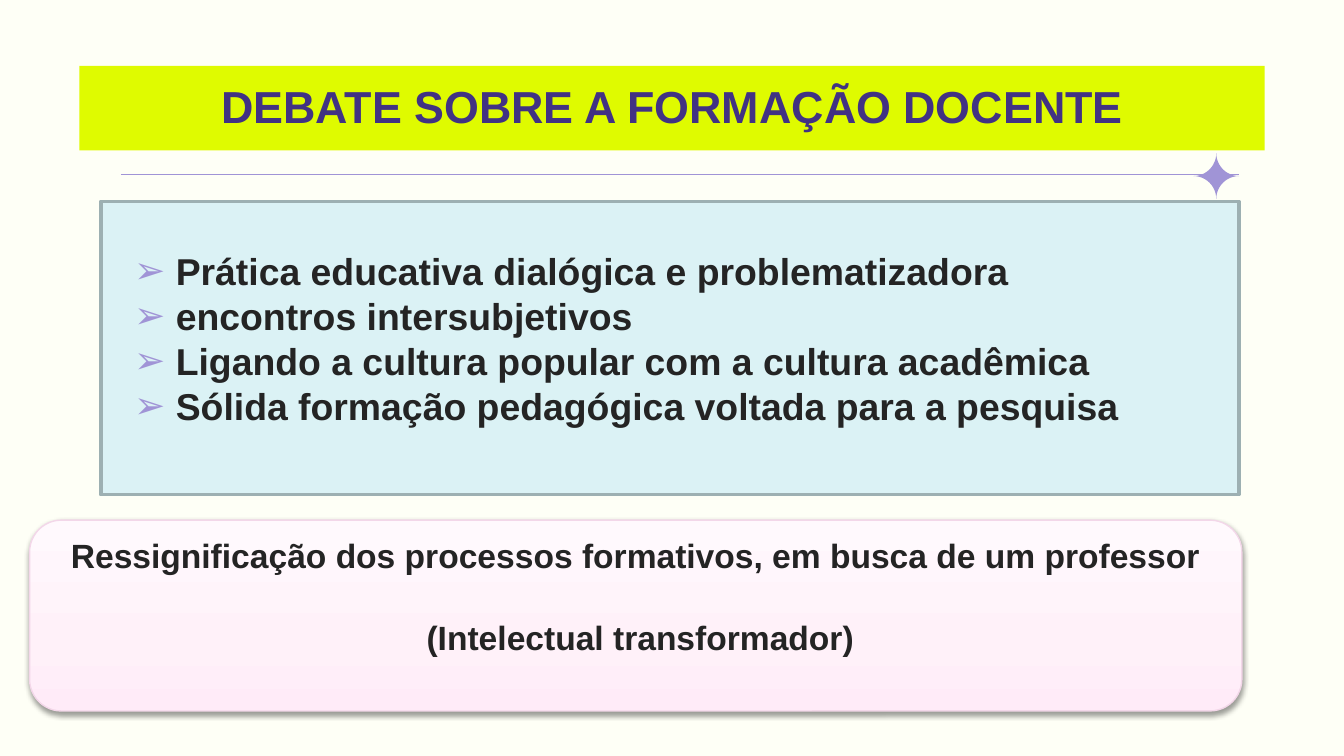
import copy
from lxml import etree
from pptx import Presentation
from pptx import util as u
from pptx.dml.color import RGBColor
from pptx.enum import shapes, text
from pptx.oxml import parse_xml
from pptx.oxml.ns import qn

NS = 'xmlns:a="http://schemas.openxmlformats.org/drawingml/2006/main"'
LILAC, INK = "A094D6", "242424"


def rgb(color):
    return RGBColor.from_string(color)


def add_run(p, words, size, color):
    r = p.add_run()
    r.text = words
    r.font.name, r.font.size, r.font.bold = "Arial", u.Pt(size), True
    r.font.color.rgb = rgb(color)


prs = Presentation()
# 16:9 page
prs.slide_width, prs.slide_height = u.Inches(10), u.Inches(10 * 9 / 16)
s = prs.slides.add_slide(prs.slide_layouts[6])
s.background.fill.solid()
s.background.fill.fore_color.rgb = rgb("FEFFF6")

# Plain shapes: kind, left, top, width, height, fill, border
kinds = shapes.MSO_SHAPE
boxes = []
for kind, x, y, w, h, fill, border in (
    (kinds.RECTANGLE, 0.75, 1.5, 8.47, 2.18, "DBF2F5", "9DB0B2"),
    (kinds.RECTANGLE, 0.59, 0.49, 8.82, 0.63, "DFFB00", None),
    (kinds.PLAQUE, 8.88, 1.14, 0.34, 0.34, LILAC, None),
    (kinds.ROUNDED_RECTANGLE, 0.22, 3.87, 9.02, 1.42, None, "F3D7E9"),
):
    sp = s.shapes.add_shape(kind, u.Inches(x), u.Inches(y), u.Inches(w), u.Inches(h))
    sp.shadow.inherit = False
    if fill:
        sp.fill.solid()
        sp.fill.fore_color.rgb = rgb(fill)
    if border:
        sp.line.color.rgb = rgb(border)
    else:
        sp.line.fill.background()
    sp.text_frame.word_wrap = True
    boxes.append(sp)
body, title, star, closing = boxes
body.line.width = u.Pt(2)
closing.line.width = u.Pt(0.75)
star.adjustments[0] = 0.5

# Title
tf = title.text_frame
tf.vertical_anchor = text.MSO_ANCHOR.MIDDLE
tf.margin_top, tf.margin_bottom = u.Inches(0.05), u.Inches(0.09)
p = tf.paragraphs[0]
p.alignment = text.PP_ALIGN.CENTER
add_run(p, "DEBATE SOBRE A FORMAÇÃO DOCENTE", 24, "413283")

# Rule under the title, behind the star
line = s.shapes.add_connector(shapes.MSO_CONNECTOR.STRAIGHT, u.Inches(0.9), u.Inches(1.3),
                              u.Inches(9.22), u.Inches(1.3))
line.line.color.rgb = rgb(LILAC)
line.line.width = u.Pt(0.75)
etree.SubElement(line._element.spPr, qn("a:effectLst"))
star._element.addprevious(line._element)

# Bulleted list
tf = body.text_frame
tf.vertical_anchor = text.MSO_ANCHOR.TOP
tf.margin_left = tf.margin_right = u.Inches(0.1)
tf.margin_top = u.Inches(0.35)
for i, words in enumerate((
    "Prática educativa dialógica e problematizadora",
    "encontros intersubjetivos",
    "Ligando a cultura popular com a cultura acadêmica",
    "Sólida formação pedagógica voltada para a pesquisa",
)):
    p = tf.add_paragraph() if i else tf.paragraphs[0]
    p.alignment = text.PP_ALIGN.LEFT
    pPr = p._p.get_or_add_pPr()
    pPr.set("marL", str(u.Inches(0.46)))
    pPr.set("indent", str(u.Inches(-0.31)))
    pPr.append(parse_xml(f'<a:buClr {NS}><a:srgbClr val="{LILAC}"/></a:buClr>'))
    pPr.append(parse_xml(f'<a:buFont {NS} typeface="Arial"/>'))
    pPr.append(parse_xml(f'<a:buChar {NS} char="➢"/>'))
    add_run(p, words, 20, INK)

# Closing box: three-stop gradient and soft shadow
closing.fill.gradient()
closing.fill.gradient_angle = 90
stops = closing._element.spPr.find(".//" + qn("a:gsLst"))
stops.append(copy.deepcopy(stops[0]))
for stop, (pos, color) in zip(closing.fill.gradient_stops,
                              ((0, "FFEBF8"), (0.35, "FFF1F9"), (1, "FFF9FD"))):
    stop.position = pos
    stop.color.rgb = rgb(color)
closing._element.spPr.find(qn("a:effectLst")).append(parse_xml(
    f'<a:outerShdw {NS} blurRad="{u.Pt(3.1)}" dist="{u.Pt(1.6)}" dir="5400000" rotWithShape="0">'
    '<a:srgbClr val="000000"><a:alpha val="38000"/></a:srgbClr></a:outerShdw>'))

# Closing text
tf = closing.text_frame
tf.vertical_anchor = text.MSO_ANCHOR.TOP
tf.margin_top = u.Inches(0.04)
for i, words in enumerate((
    "Ressignificação dos processos formativos, em busca de um professor",
    " (Intelectual transformador)",
)):
    p = tf.add_paragraph() if i else tf.paragraphs[0]
    p.alignment = text.PP_ALIGN.CENTER
    if i:
        p.space_before = u.Pt(22.5)
    add_run(p, words, 18, INK)

prs.save("out.pptx")
